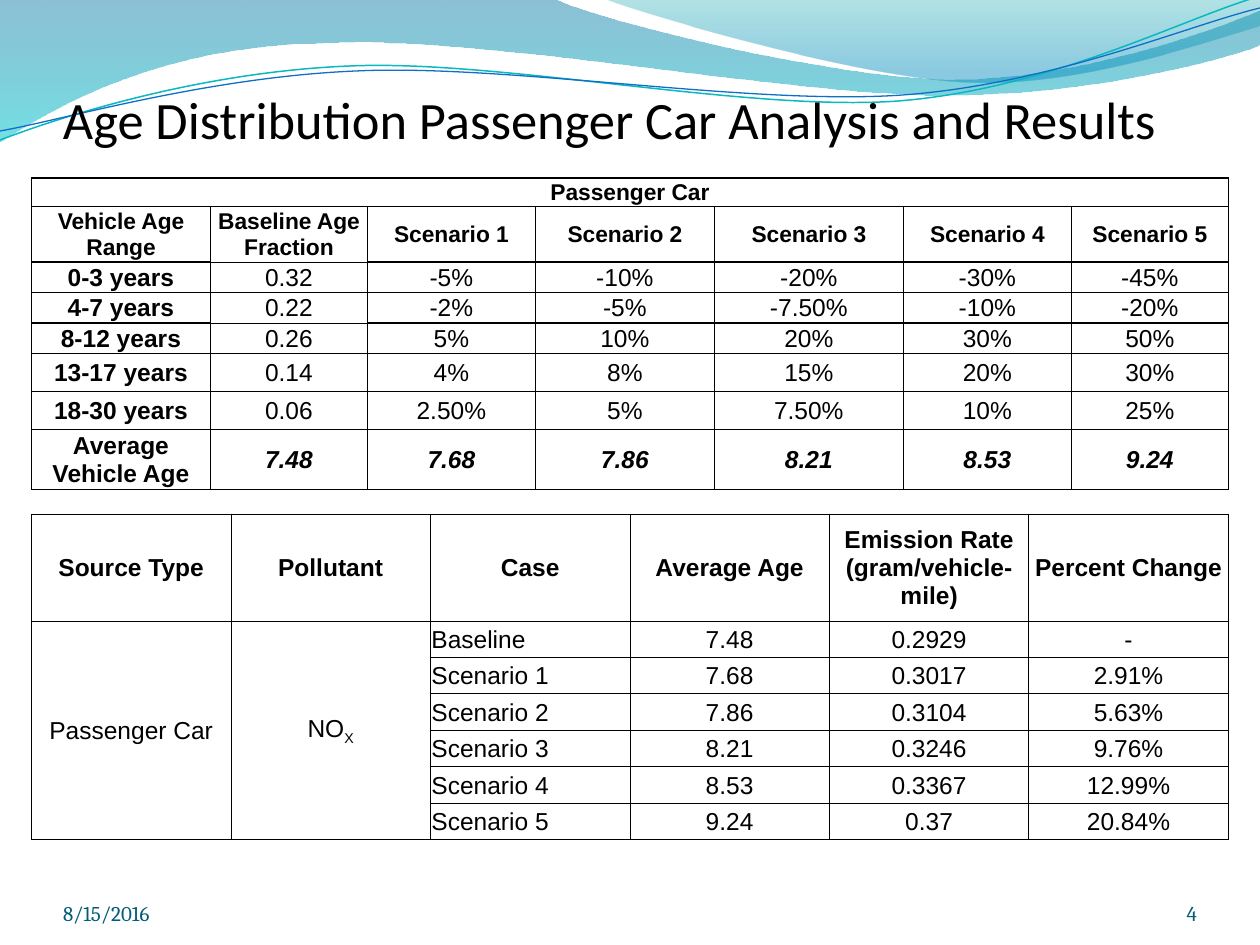
from lxml import etree
from pptx import Presentation, util as u
from pptx.dml.color import RGBColor
from pptx.enum import text
from pptx.oxml import ns

PX = 914400 / 126
CENTER, LEFT, RIGHT = text.PP_ALIGN.CENTER, text.PP_ALIGN.LEFT, text.PP_ALIGN.RIGHT


def emu(px):
    return u.Emu(round(px * PX))


def color(value):
    return RGBColor.from_string(value)


class Deck:
    ink = "000000"
    accent = "045D75"
    table_font = "Arial"

    def __init__(self, width, height):
        self.file = Presentation()
        self.file.slide_width, self.file.slide_height = emu(width), emu(height)
        self.slide = self.file.slides.add_slide(self.file.slide_layouts[6])

    def style(self, run, font, size, hue, bold=False, italic=False):
        run.font.name, run.font.size = font, u.Pt(size)
        run.font.bold, run.font.italic = bold, italic
        run.font.color.rgb = color(hue)

    def label(self, words, left, top, width, height, font, size, hue, align=LEFT, inset=0):
        frame = self.slide.shapes.add_textbox(*map(emu, (left, top, width, height))).text_frame
        frame.word_wrap = True
        frame.vertical_anchor = text.MSO_ANCHOR.BOTTOM
        frame.margin_left = frame.margin_right = frame.margin_bottom = 0
        frame.margin_top = emu(inset)
        frame.text = words
        frame.paragraphs[0].alignment = align
        self.style(frame.paragraphs[0].runs[0], font, size, hue)

    def outline(self, start, segments, closed):
        points = [(emu(x), emu(y)) for s in segments for x, y in zip(s[::2], s[1::2])]
        builder = self.slide.shapes.build_freeform(*map(emu, start), scale=1.0)
        builder.add_line_segments(points, close=closed)
        shape = builder.convert_to_shape()
        shape.shadow.inherit = False
        steps = iter(list(shape._element.iter(ns.qn("a:lnTo"))))
        for segment in segments:
            first = next(steps)
            if len(segment) == 6:
                curve = etree.Element(ns.qn("a:cubicBezTo"))
                first.addprevious(curve)
                for step in (first, next(steps), next(steps)):
                    curve.append(step[0])
                    step.getparent().remove(step)
        return shape

    def wave(self, start, segments, stops):
        shape = self.outline(start, segments, True)
        shape.line.fill.background()
        shape.fill.gradient()
        shape.fill.gradient_angle = 270
        for stop, (position, hue, opacity) in zip(shape.fill.gradient_stops, stops):
            stop.position = position
            stop.color.rgb = color(hue)
        hues = shape._element.spPr.iter(ns.qn("a:srgbClr"))
        for hue, (_, _, opacity) in zip(list(hues), stops):
            etree.SubElement(hue, ns.qn("a:alpha")).set("val", str(opacity * 1000))

    def strand(self, start, segments, hue, width):
        shape = self.outline(start, segments, False)
        shape.fill.background()
        shape.line.color.rgb = color(hue)
        shape.line.width = u.Pt(width)

    def border(self, cell, widths):
        properties = cell._tc.get_or_add_tcPr()
        for position, (side, width) in enumerate(widths.items()):
            line = etree.Element(ns.qn(f"a:ln{side}"), w=str(u.Pt(width)))
            fill = etree.SubElement(line, ns.qn("a:solidFill"))
            etree.SubElement(fill, ns.qn("a:srgbClr"), val=self.ink)
            properties.insert(position, line)

    def table(self, left, top, columns, heights, rows, width, look, thin=()):
        grid = self.slide.shapes.add_table(
            len(rows), len(columns), emu(left), emu(top),
            emu(sum(columns)), emu(sum(heights))).table
        grid.first_row = grid.horz_banding = False
        for column, size in zip(grid.columns, columns):
            column.width = emu(size)
        for r, (row, height) in enumerate(zip(rows, heights)):
            grid.rows[r].height = emu(height)
            for c, words in enumerate(row):
                cell = grid.cell(r, c)
                cell.fill.background()
                cell.vertical_anchor = text.MSO_ANCHOR.MIDDLE
                cell.margin_left = cell.margin_right = cell.margin_top = emu(1)
                cell.margin_bottom = 0
                beyond = {"L": (r, c - 1), "R": (r, c + 1), "T": (r - 1, c), "B": (r + 1, c)}
                self.border(cell, {side: 0.5 if {(r, c), other} & set(thin) else width
                                   for side, other in beyond.items()})
                if words:
                    size, bold, italic, align = look(r, c)
                    paragraph = cell.text_frame.paragraphs[0]
                    paragraph.text = words
                    paragraph.alignment = align
                    self.style(paragraph.runs[0], self.table_font, size, self.ink, bold, italic)
        return grid

    def subscript(self, cell, words, size):
        run = cell.text_frame.paragraphs[0].add_run()
        run.text = words
        self.style(run, self.table_font, size, self.ink)
        run._r.get_or_add_rPr().set("baseline", "-25000")


def age_look(r, c):
    last = r == 7
    return 13 if r < 2 else 14, r < 2 or c == 0 or last, last and c > 0, CENTER


def emission_look(r, c):
    return 14, r == 0, False, LEFT if r and c == 2 else CENTER


def main():
    deck = Deck(1260, 945)
    deck.wave((0, 0), [
        (554, -1), (600, 21, 837, 79, 955, 79), (1075, 79, 1207, 33, 1260, 11),
        (1261, 45), (1239, 55, 1096, 96, 940, 95), (784, 95, 481, 35, 324, 43),
        (163, 45, 58, 105, -1, 142)], [(0, "0074A1", 45), (1, "00C6CF", 55)])
    deck.wave((604, -1), [
        (641, 14, 859, 78, 969, 82), (1079, 87, 1211, 40, 1260, 26), (1260, 0)],
        [(0, "00A1A9", 30), (0.8, "008BBF", 45)])
    deck.strand((0, 140), [
        (60, 117, 199, 72, 349, 66), (498, 59, 747, 112, 898, 101),
        (1050, 89, 1182, 19, 1257, -3)], "0AB8BF", 0.85)
    deck.strand((0, 131), [
        (59, 121, 207, 77, 357, 71), (508, 64, 752, 106, 903, 95),
        (1053, 84, 1186, 26, 1260, 8)], "0F6FC6", 0.75)

    deck.label("8/15/2016", 63, 876, 294, 50, "Cambria", 12, deck.accent)
    deck.label("4", 1092, 876, 105, 50, "Cambria", 12, deck.accent, RIGHT)
    deck.label("Age Distribution Passenger Car Analysis and Results",
               63, 63, 1134, 87, "Calibri", 30, deck.ink, inset=6)

    scenarios = [f"Scenario {n}" for n in range(1, 6)]
    average_ages = ["7.48", "7.68", "7.86", "8.21", "8.53", "9.24"]

    emission_rates = ["0.2929", "0.3017", "0.3104", "0.3246", "0.3367", "0.37"]
    changes = ["-", "2.91%", "5.63%", "9.76%", "12.99%", "20.84%"]
    cases = zip(["Baseline"] + scenarios, average_ages, emission_rates, changes)
    emission_rows = [["Source Type", "Pollutant", "Case", "Average Age",
                      "Emission Rate (gram/vehicle-mile)", "Percent Change"]]
    emission_rows += [["", "", *case] for case in cases]
    emission_rows[1][:2] = ["Passenger Car", "NO"]
    emissions = deck.table(31.5, 514, [1197 / 6] * 6, [107] + [36.5] * 6,
                           emission_rows, 0.5, emission_look)
    deck.subscript(emissions.cell(1, 1), "X", 14)
    for c in range(2):
        emissions.cell(1, c).merge(emissions.cell(6, c))

    age_rows = [
        ["Passenger Car"] + [""] * 6,
        ["Vehicle Age Range", "Baseline Age Fraction"] + scenarios,
        ["0-3 years", "0.32", "-5%", "-10%", "-20%", "-30%", "-45%"],
        ["4-7 years", "0.22", "-2%", "-5%", "-7.50%", "-10%", "-20%"],
        ["8-12 years", "0.26", "5%", "10%", "20%", "30%", "50%"],
        ["13-17 years", "0.14", "4%", "8%", "15%", "20%", "30%"],
        ["18-30 years", "0.06", "2.50%", "5%", "7.50%", "10%", "25%"],
        ["Average Vehicle Age"] + average_ages]
    ages = deck.table(31.5, 178, [179, 157, 168, 179, 189, 168, 157],
                      [27, 52, 29, 29, 28, 38, 38, 55], age_rows, 1, age_look,
                      thin=[(r, 1) for r in range(2, 7)])
    ages.cell(0, 0).merge(ages.cell(0, 6))
    deck.file.save("out.pptx")


if __name__ == "__main__":
    main()
